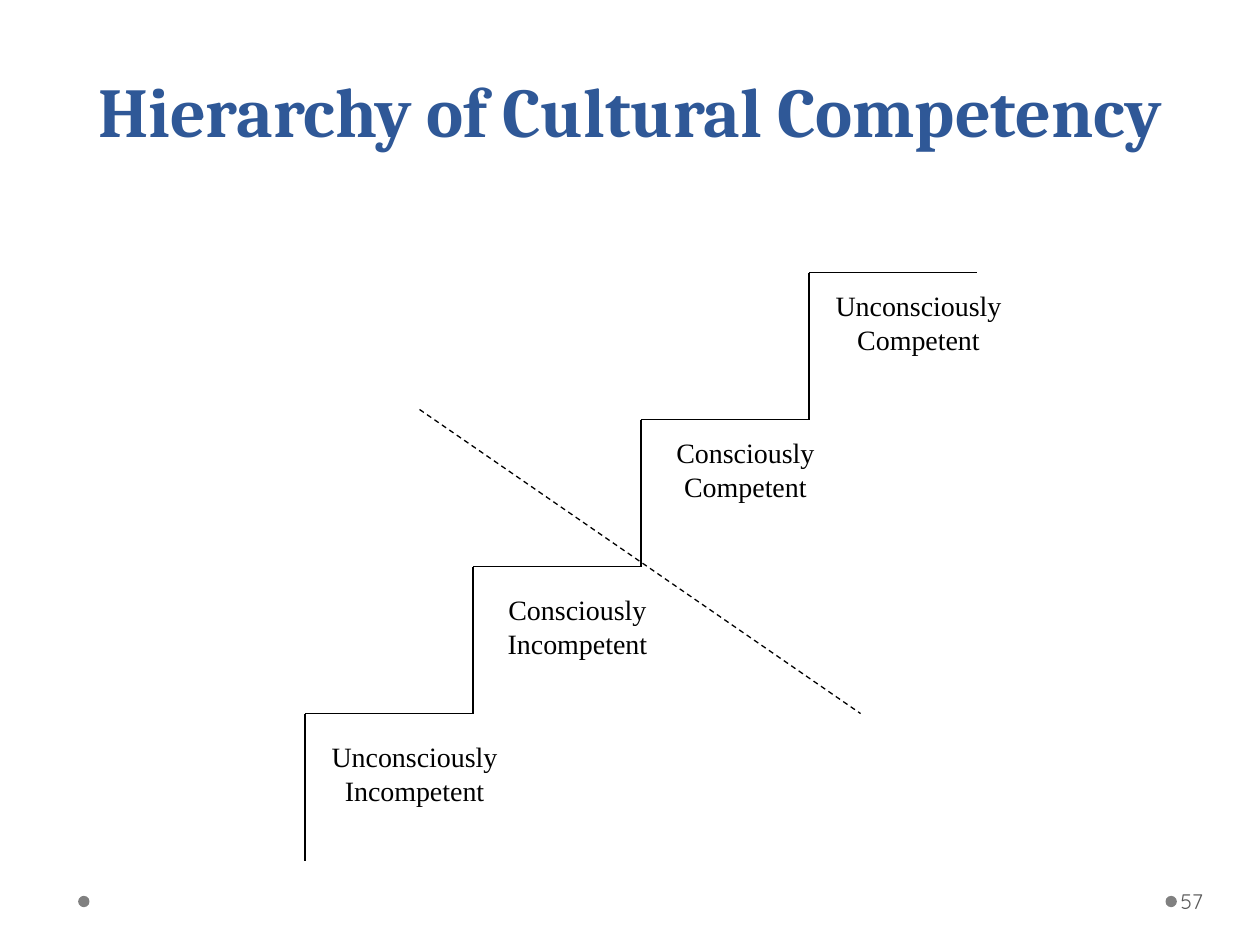
from lxml import etree
from pptx import Presentation
from pptx.dml.color import RGBColor
from pptx.enum.dml import MSO_LINE as Dash
from pptx.enum.shapes import MSO_CONNECTOR as Conn, MSO_SHAPE as Shape
from pptx.enum.text import MSO_ANCHOR as Anchor, MSO_AUTO_SIZE as Fit, PP_ALIGN as Align
from pptx.oxml.ns import qn
from pptx.util import Inches, Pt

RUN, RISE = 4 / 3, 7 / 6
# Label, its width and its drop below the tread, from the bottom step up
STEPS = [
    ("Unconsciously Incompetent", 1.58, 0.16),
    ("Consciously Incompetent", 1.5, 0.16),
    ("Consciously Competent", 1.5, 0.08),
    ("Unconsciously Competent", 1.58, 0.08),
]


def color(code):
    return RGBColor.from_string(code)


def add_text(slide, text, box, font="Times New Roman", size=16, ink="000000",
             bold=False, align=Align.CENTER, anchor=Anchor.TOP, fit=Fit.NONE,
             inset=0.1, pitch=None):
    frame = slide.shapes.add_textbox(*map(Inches, box)).text_frame
    frame.word_wrap = True
    frame.auto_size = fit
    frame.vertical_anchor = anchor
    frame.margin_left = Inches(inset)
    para = frame.paragraphs[0]
    para.alignment = align
    if pitch:
        para.line_spacing = Pt(pitch)
    run = para.add_run()
    run.text = text
    run.font.name, run.font.size, run.font.bold = font, Pt(size), bold
    run.font.color.rgb = color(ink)


def add_line(slide, start, end, dash=None):
    line = slide.shapes.add_connector(Conn.STRAIGHT, *map(Inches, (*start, *end)))
    line.line.color.rgb = color("000000")
    line.line.width = Pt(0.75)
    if dash:
        line.line.dash_style = dash
    etree.SubElement(line._element.spPr, qn("a:effectLst"))


def add_dot(slide, left, top, size=0.09):
    dot = slide.shapes.add_shape(Shape.OVAL, *map(Inches, (left, top, size, size)))
    dot.shadow.inherit = False
    dot.fill.solid()
    dot.fill.fore_color.rgb = color("808080")
    dot.line.fill.background()


def add_title(slide, left, top, width, height):
    add_text(slide, "Hierarchy of Cultural Competency", (left, top, width, height),
             font="Cambria", size=40, ink="2F5897", bold=True,
             anchor=Anchor.BOTTOM, pitch=58)


def add_stairs(slide, left, base):
    """Climb up and right from the foot of the first riser."""
    for i, (label, width, drop) in enumerate(STEPS):
        x, foot = left + i * RUN, base - i * RISE
        top = foot - RISE
        add_line(slide, (x, foot), (x, top))
        add_line(slide, (x, top), (x + RUN, top))
        add_text(slide, label, (x + 0.08, top + drop, width, 0.64),
                 fit=Fit.SHAPE_TO_FIT_TEXT)
    add_line(slide, (left + 0.91, base - 3.58), (left + 4.41, base - RISE),
             dash=Dash.DASH)


def add_footer(slide, left, top):
    for x in (left, left + 8.63):
        add_dot(slide, x, top + 0.16)
    add_text(slide, "57", (left + 8.72, top, 0.61, 0.4), font="Quicksand", size=12,
             ink="595959", align=Align.LEFT, anchor=Anchor.MIDDLE, inset=0.03)


def main():
    deck = Presentation()
    deck.slide_width, deck.slide_height = Inches(10), Inches(7.5)
    slide = deck.slides.add_slide(deck.slide_layouts[6])
    add_footer(slide, 0.62, 6.95)
    add_stairs(slide, 2.42, 6.83)
    add_title(slide, 0.5, 0, 9, 1.25)
    deck.save("out.pptx")


if __name__ == "__main__":
    main()
